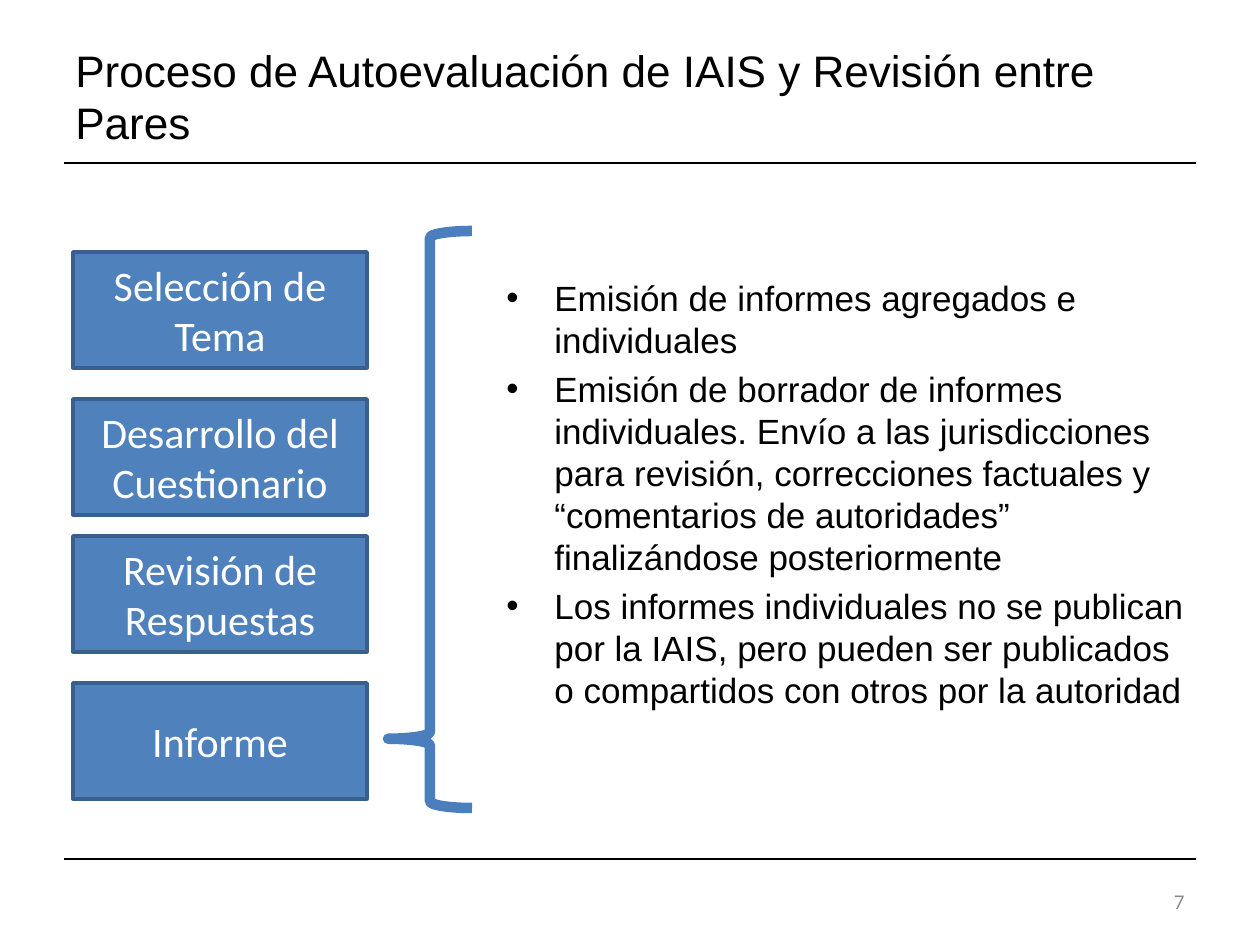
from lxml import etree
from pptx import Presentation
from pptx.dml.color import RGBColor
from pptx.enum.shapes import MSO_CONNECTOR, MSO_SHAPE
from pptx.enum.text import MSO_ANCHOR, PP_ALIGN
from pptx.oxml.ns import qn
from pptx.util import Emu, Pt

STRAIGHT = MSO_CONNECTOR.STRAIGHT
RECTANGLE, LEFT_BRACE = MSO_SHAPE.RECTANGLE, MSO_SHAPE.LEFT_BRACE
TOP, MIDDLE, BOTTOM = MSO_ANCHOR.TOP, MSO_ANCHOR.MIDDLE, MSO_ANCHOR.BOTTOM
LEFT, CENTER, RIGHT = PP_ALIGN.LEFT, PP_ALIGN.CENTER, PP_ALIGN.RIGHT

EMU_PER_PX = 914400 / 126
SLIDE_WIDTH, SLIDE_HEIGHT = 1260, 945

RULE_LEFT, RULE_RIGHT = 64, 1196
RULE_TOPS = (859, 163)

STEP_LEFT, STEP_WIDTH, STEP_HEIGHT = 73, 294, 116
STEPS = (
    ("Selección de Tema", 252),
    ("Desarrollo del Cuestionario", 399),
    ("Revisión de Respuestas", 536),
    ("Informe", 683),
)

REPORT_POINTS = (
    "Emisión de informes agregados e individuales",
    "Emisión de borrador de informes individuales. Envío a las jurisdicciones "
    "para revisión, correcciones factuales y “comentarios de autoridades” "
    "finalizándose posteriormente",
    "Los informes individuales no se publican por la IAIS, pero pueden ser "
    "publicados o compartidos con otros por la autoridad",
)


def px(length):
    return Emu(round(length * EMU_PER_PX))


def color(hex_value):
    return RGBColor.from_string(hex_value)


class SlideBuilder:
    """Holds the style and the slide being filled."""

    title_format = {"name": "Arial", "size": Pt(25.2)}
    body_format = {"name": "Arial", "size": Pt(20)}
    step_format = {"name": "Calibri", "size": Pt(24)}
    number_format = {"name": "Calibri", "size": Pt(12)}
    black, white, gray = "000000", "FFFFFF", "8C8C8C"
    step_fill, step_line, brace_line = "4F81BD", "3A5F8C", "4B7EBC"
    bullet_indent = 48

    def __init__(self, slide):
        self.slide = slide

    def fill_paragraph(self, paragraph, text, font_format, hex_value, **layout):
        paragraph.text = text
        for name, value in layout.items():
            setattr(paragraph, name, value)
        for name, value in font_format.items():
            setattr(paragraph.font, name, value)
        paragraph.font.color.rgb = color(hex_value)

    def text_frame(self, left, top, width, height, anchor):
        box = self.slide.shapes.add_textbox(px(left), px(top), px(width), px(height))
        frame = box.text_frame
        frame.word_wrap = True
        frame.vertical_anchor = anchor
        return frame

    def rule(self, top):
        line = self.slide.shapes.add_connector(
            STRAIGHT, px(RULE_LEFT), px(top), px(RULE_RIGHT), px(top)
        )
        line.line.color.rgb = color(self.black)
        line.line.width = Pt(0.75)
        etree.SubElement(line._element.spPr, qn("a:effectLst"))

    def title(self, text, *bounds):
        frame = self.text_frame(*bounds, BOTTOM)
        self.fill_paragraph(frame.paragraphs[0], text, self.title_format,
                            self.black, alignment=LEFT, line_spacing=Pt(30))

    def slide_number(self, text, *bounds):
        frame = self.text_frame(*bounds, MIDDLE)
        self.fill_paragraph(frame.paragraphs[0], text, self.number_format,
                            self.gray, alignment=RIGHT)

    def bullets(self, points, *bounds):
        frame = self.text_frame(*bounds, TOP)
        for index, text in enumerate(points):
            paragraph = frame.add_paragraph() if index else frame.paragraphs[0]
            properties = paragraph._p.get_or_add_pPr()
            properties.set("marL", str(px(self.bullet_indent)))
            properties.set("indent", str(-px(self.bullet_indent)))
            etree.SubElement(properties, qn("a:buFont"), typeface="Arial")
            etree.SubElement(properties, qn("a:buChar"), char="•")
            self.fill_paragraph(paragraph, text, self.body_format, self.black,
                                alignment=LEFT, line_spacing=Pt(24),
                                space_before=Pt(4 if index else 0))

    def outlined_shape(self, kind, bounds, hex_value, line_width):
        shape = self.slide.shapes.add_shape(kind, *map(px, bounds))
        shape.shadow.inherit = False
        shape.line.color.rgb = color(hex_value)
        shape.line.width = Pt(line_width)
        return shape

    def step(self, text, top):
        bounds = (STEP_LEFT, top, STEP_WIDTH, STEP_HEIGHT)
        shape = self.outlined_shape(RECTANGLE, bounds, self.step_line, 2)
        shape.fill.solid()
        shape.fill.fore_color.rgb = color(self.step_fill)
        frame = shape.text_frame
        frame.word_wrap = True
        frame.vertical_anchor = MIDDLE
        self.fill_paragraph(frame.paragraphs[0], text, self.step_format,
                            self.white, alignment=CENTER)

    def brace(self, *bounds):
        shape = self.outlined_shape(LEFT_BRACE, bounds, self.brace_line, 6)
        shape.fill.background()
        shape.adjustments[0] = 0.08
        shape.adjustments[1] = 0.88


def main():
    presentation = Presentation()
    presentation.slide_width = px(SLIDE_WIDTH)
    presentation.slide_height = px(SLIDE_HEIGHT)
    builder = SlideBuilder(
        presentation.slides.add_slide(presentation.slide_layouts[6])
    )

    for top in RULE_TOPS:
        builder.rule(top)
    builder.slide_number("7", 903, 876, 294, 50)
    builder.title("Proceso de Autoevaluación de IAIS y Revisión entre Pares",
                  63, 38, 1134, 117)
    builder.bullets(REPORT_POINTS, 494, 270, 703, 574)
    for text, top in STEPS:
        builder.step(text, top)
    builder.brace(388, 231, 84, 577)

    presentation.save("out.pptx")


if __name__ == "__main__":
    main()
